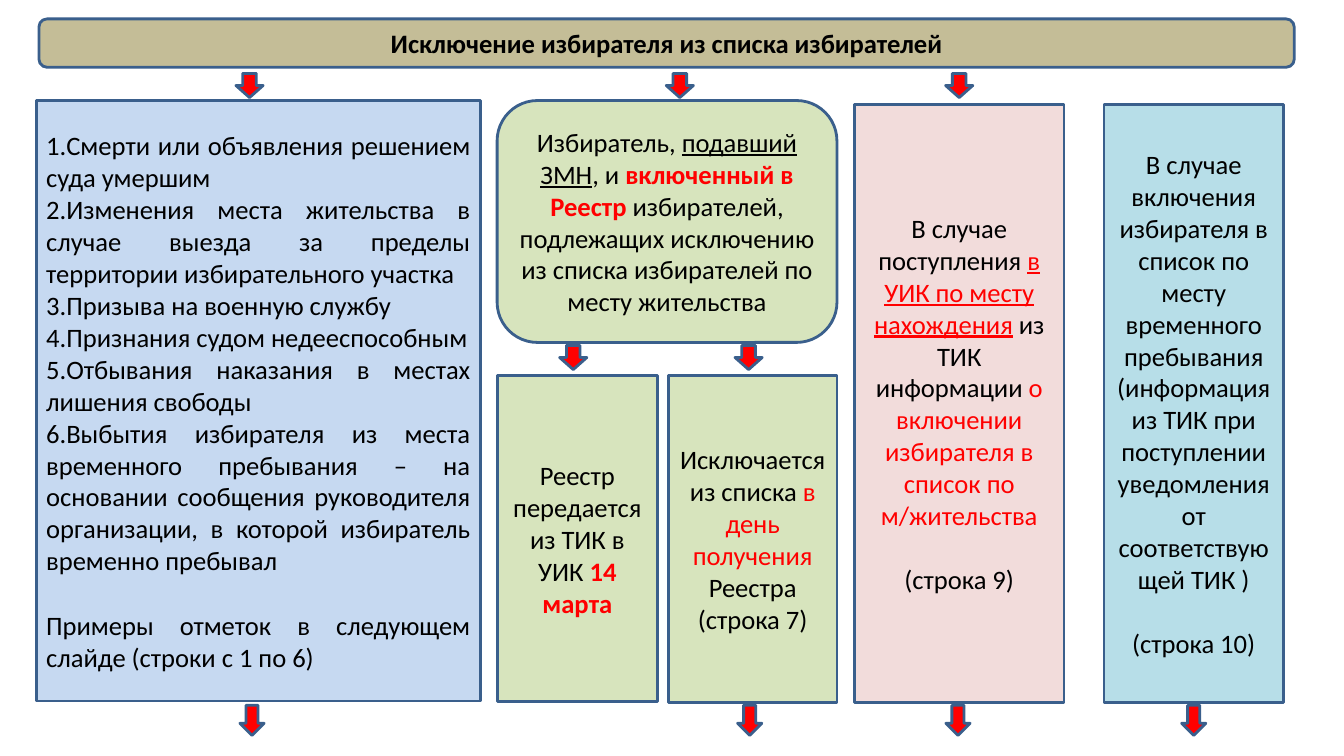
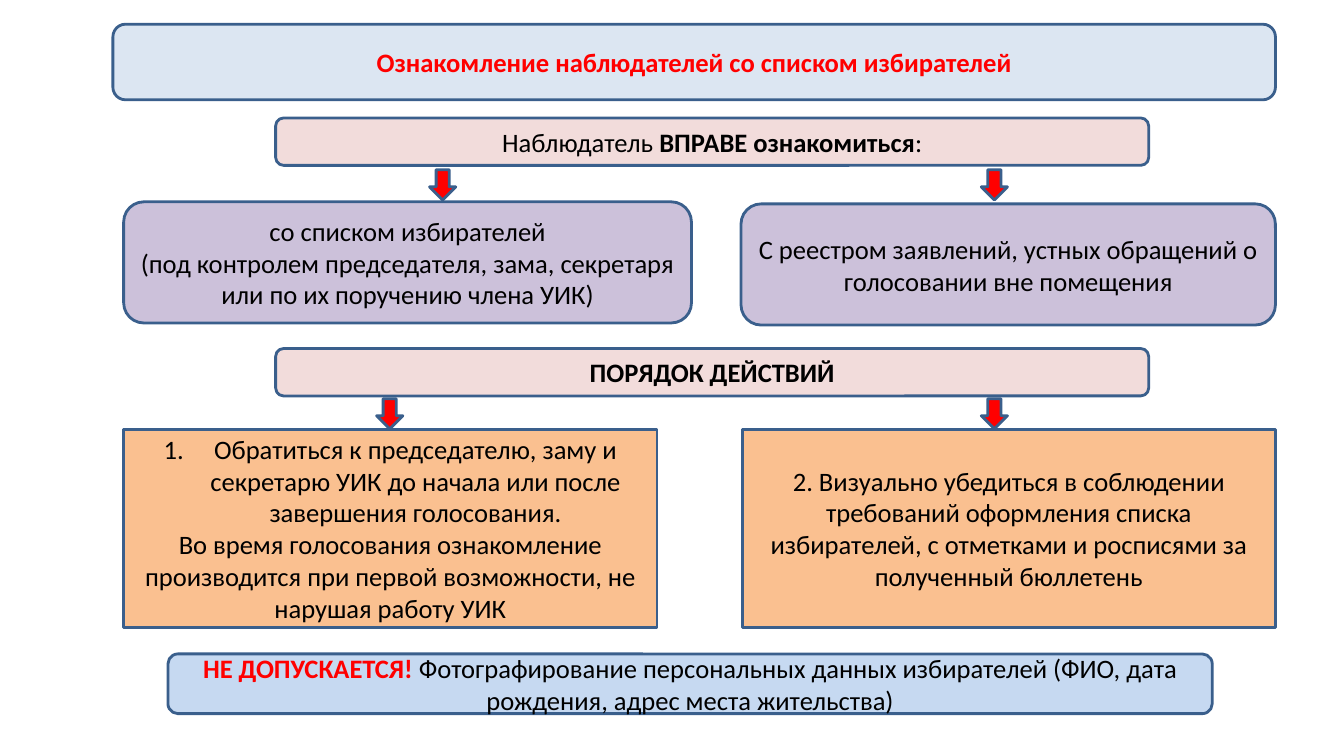
from typing import NamedTuple

from lxml.etree import SubElement
from pptx import Presentation
from pptx.dml.color import RGBColor
from pptx.enum.shapes import MSO_SHAPE as Preset
from pptx.enum.text import MSO_ANCHOR as Anchor, PP_ALIGN as Align
from pptx.oxml.ns import qn
from pptx.util import Inches, Pt

COLORS = {
    "text": "000000",
    "accent": "FF0000",
    "outline": "3A5F8C",
    "sand": "C4BD97",
    "sky": "C6D9F1",
    "mist": "DCE6F2",
    "green": "D7E4BD",
    "pink": "F2DCDB",
    "aqua": "B7DEE8",
    "violet": "CCC1DA",
    "orange": "FAC090",
}
FONT = "Calibri"
TEXT_SIZE = 19
BLANK_LINE = 23.2  # points
LINE_WIDTH = 2


class Box(NamedTuple):
    left: float
    top: float
    width: float
    height: float

    def inner(self, x, y, width, height):
        """Return an inner box given in percent of this one."""
        return Box(self.left + self.width * x / 100,
                   self.top + self.height * y / 100,
                   self.width * width / 100,
                   self.height * height / 100)


PAGE = Box(0, 0, 13.33, 7.5)


def rgb(name):
    return RGBColor.from_string(COLORS[name])


def add_outlined(slide, preset, box, fill):
    shape = slide.shapes.add_shape(preset, *map(Inches, box))
    shape.shadow.inherit = False
    shape.fill.solid()
    shape.fill.fore_color.rgb = rgb(fill)
    shape.line.color.rgb = rgb("outline")
    shape.line.width = Pt(LINE_WIDTH)
    return shape


def apply_style(font, style):
    """Apply style letters: r is red, b is bold, u is underlined."""
    if "r" in style:
        font.color.rgb = rgb("accent")
    if "b" in style:
        font.bold = True
    if "u" in style:
        font.underline = True


def number_paragraph(paragraph):
    props = paragraph._p.get_or_add_pPr()
    props.set("marL", str(Inches(0.5)))
    props.set("indent", str(-Inches(0.5)))
    SubElement(props, qn("a:buFont"), typeface="+mj-lt")
    SubElement(props, qn("a:buAutoNum"), type="arabicPeriod")


def write_paragraph(paragraph, content, align):
    """Write a plain string or a list of (text, style) runs."""
    runs = [(content, "")] if isinstance(content, str) else content
    paragraph.alignment = align
    font = paragraph.font
    font.name, font.size = FONT, Pt(TEXT_SIZE)
    font.color.rgb = rgb("text")
    if len(runs) == 1:
        apply_style(font, runs[0][1])
    for text, style in runs:
        run = paragraph.add_run()
        run.text = text
        if len(runs) > 1:
            apply_style(run.font, style)


def panel(slide, box, fill, paragraphs, note=None, rounded=False,
          align=Align.CENTER, numbered=False):
    """Draw a text panel; the note follows after one line of space."""
    preset = Preset.ROUNDED_RECTANGLE if rounded else Preset.RECTANGLE
    frame = add_outlined(slide, preset, box, fill).text_frame
    frame.word_wrap = True
    frame.vertical_anchor = Anchor.MIDDLE
    contents = paragraphs + ([note] if note else [])
    for index, content in enumerate(contents):
        paragraph = frame.add_paragraph() if index else frame.paragraphs[0]
        if note and index == len(paragraphs):
            paragraph.space_before = Pt(BLANK_LINE)
        if numbered and index == 0:
            number_paragraph(paragraph)
        write_paragraph(paragraph, content, align)


def arrows(slide, strip, centers, width):
    """Draw down arrows centred at percents of the strip's width."""
    for center in centers:
        middle = strip.left + strip.width * center / 100
        add_outlined(slide, Preset.DOWN_ARROW,
                     Box(middle - width / 2, strip.top, width, strip.height),
                     "accent")


def register_branch(slide, box):
    panel(slide, box.inner(0, 0, 100, 40.2), "green", [[
        ("Избиратель, ", ""), ("подавший ЗМН", "u"), (", и ", ""),
        ("включенный в Реестр ", "rb"),
        ("избирателей, подлежащих исключению из списка избирателей "
         "по месту жительства", ""),
    ]], rounded=True)
    arrows(slide, box.inner(0, 40.7, 100, 4), (22.4, 74), 0.27)
    panel(slide, box.inner(0, 45.7, 47.2, 54.2), "green", [[
        ("Реестр передается из ТИК в УИК ", ""), ("14 марта", "rb"),
    ]])
    panel(slide, box.inner(50.4, 45.7, 49.6, 54.3), "green", [
        [("Исключается из списка ", ""), ("в день получения ", "r"),
         ("Реестра", "")],
        "(строка 7)",
    ])


def exclusion_board(slide, box):
    panel(slide, box.inner(0, 0, 35.6, 99.8), "sky", [
        "1.Смерти или объявления решением суда умершим",
        "2.Изменения места жительства в случае выезда за пределы "
        "территории избирательного участка",
        "3.Призыва на военную службу",
        "4.Признания судом недееспособным",
        "5.Отбывания наказания в местах лишения свободы",
        "6.Выбытия избирателя из места временного пребывания – на "
        "основании сообщения руководителя организации, в которой "
        "избиратель временно пребывал",
    ], note="Примеры отметок в следующем слайде (строки с 1 по 6)",
        align=Align.JUSTIFY)
    register_branch(slide, box.inner(36.95, 0, 27.25, 100))
    panel(slide, box.inner(65.6, 0.7, 16.8, 99.3), "pink", [[
        ("В случае поступления ", ""),
        ("в УИК по месту нахождения", "ru"),
        (" из ТИК информации ", ""),
        ("о включении избирателя в список по м/жительства", "r"),
    ]], note="(строка 9)")
    panel(slide, box.inner(85.6, 0.7, 14.4, 99.3), "aqua", [
        "В случае включения избирателя в список по месту временного "
        "пребывания (информация из ТИК при поступлении уведомления от "
        "соответствующей ТИК )",
    ], note="(строка 10)")
    arrows(slide, box.inner(0, -4.5, 100, 4), (17.1, 51.6, 74), 0.27)
    arrows(slide, box.inner(0, 100.5, 100, 5), (17.3, 57.2, 73.9, 92.8), 0.24)


def exclusion_slide(slide):
    panel(slide, PAGE.inner(2.9, 2.5, 93.4, 6.4), "sand",
          [[("Исключение избирателя из списка избирателей", "b")]],
          rounded=True)
    exclusion_board(slide, PAGE.inner(2.7, 13.3, 92.8, 79.6))


def section(slide, box, head_height, title, strip, centers, fill, cards,
            rounded):
    """Draw a heading with arrows leading to cards of (place, text, numbered)."""
    panel(slide, box.inner(13.2, 0, 75.8, head_height), "pink", [title],
          rounded=True)
    for place, paragraphs, numbered in cards:
        panel(slide, box.inner(*place), fill, paragraphs, rounded=rounded,
              numbered=numbered)
    strip_top, strip_height = strip
    arrows(slide, box.inner(0, strip_top, 100, strip_height), centers, 0.26)


def observers_slide(slide):
    panel(slide, PAGE.inner(8.4, 3.2, 86.5, 10), "mist",
          [[("Ознакомление наблюдателей со списком избирателей", "rb")]],
          rounded=True)
    section(
        slide, PAGE.inner(9.2, 15.6, 85.7, 27.4), 22.9,
        [("Наблюдатель ", ""), ("ВПРАВЕ ознакомиться", "b"), (":", "")],
        (25, 14.6), (27.7, 75.6), "violet", [
            ((0, 40.5, 49.3, 58.5), [
                "со списком избирателей",
                "(под контролем председателя, зама, секретаря или по их "
                "поручению члена УИК)",
            ], False),
            ((53.6, 41.5, 46.4, 58.5), [
                "С реестром заявлений, устных обращений о голосовании вне "
                "помещения",
            ], False),
        ], rounded=True)
    section(
        slide, PAGE.inner(9.2, 46.1, 85.7, 36.9), 17,
        [("ПОРЯДОК ДЕЙСТВИЙ", "b")],
        (18, 10.8), (23.1, 75.6), "orange", [
            ((0, 28.9, 46.3, 71.1), [
                "Обратиться к председателю, заму и секретарю УИК до начала "
                "или после завершения голосования.",
                "Во время голосования ознакомление производится при первой "
                "возможности, не нарушая работу УИК",
            ], True),
            ((53.7, 28.9, 46.3, 71.1), [
                "2. Визуально убедиться в соблюдении требований оформления "
                "списка избирателей, с отметками и росписями за полученный "
                "бюллетень",
            ], False),
        ], rounded=False)
    panel(slide, PAGE.inner(12.5, 86.5, 77.7, 7.9), "sky", [[
        ("НЕ ДОПУСКАЕТСЯ! ", "rb"),
        ("Фотографирование персональных данных избирателей (ФИО, дата "
         "рождения, адрес места жительства)", ""),
    ]], rounded=True)


def main():
    deck = Presentation()
    deck.slide_width = Inches(PAGE.width)
    deck.slide_height = Inches(PAGE.height)
    blank = deck.slide_layouts[6]
    for build in (exclusion_slide, observers_slide):
        build(deck.slides.add_slide(blank))
    deck.save("out.pptx")


if __name__ == "__main__":
    main()
